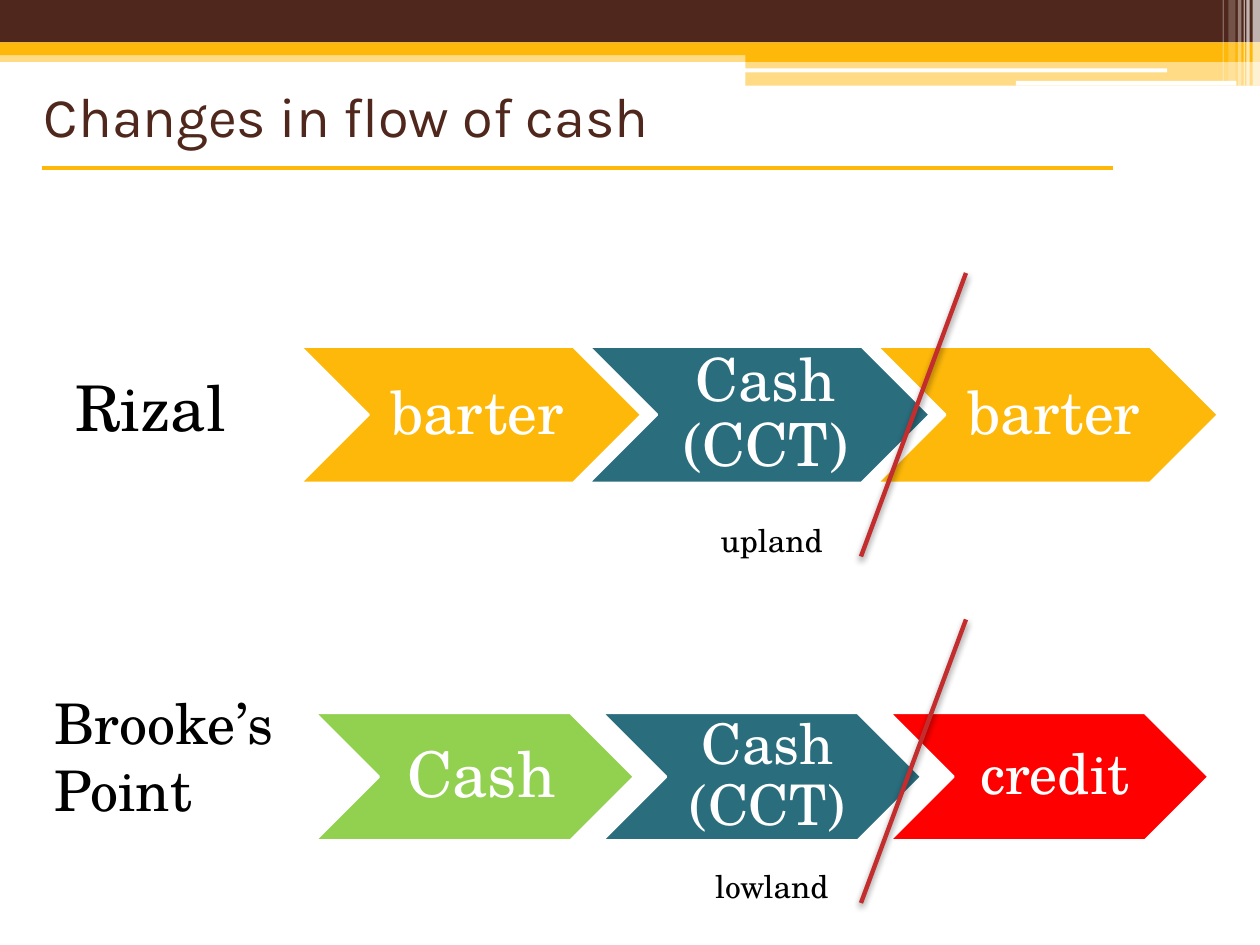
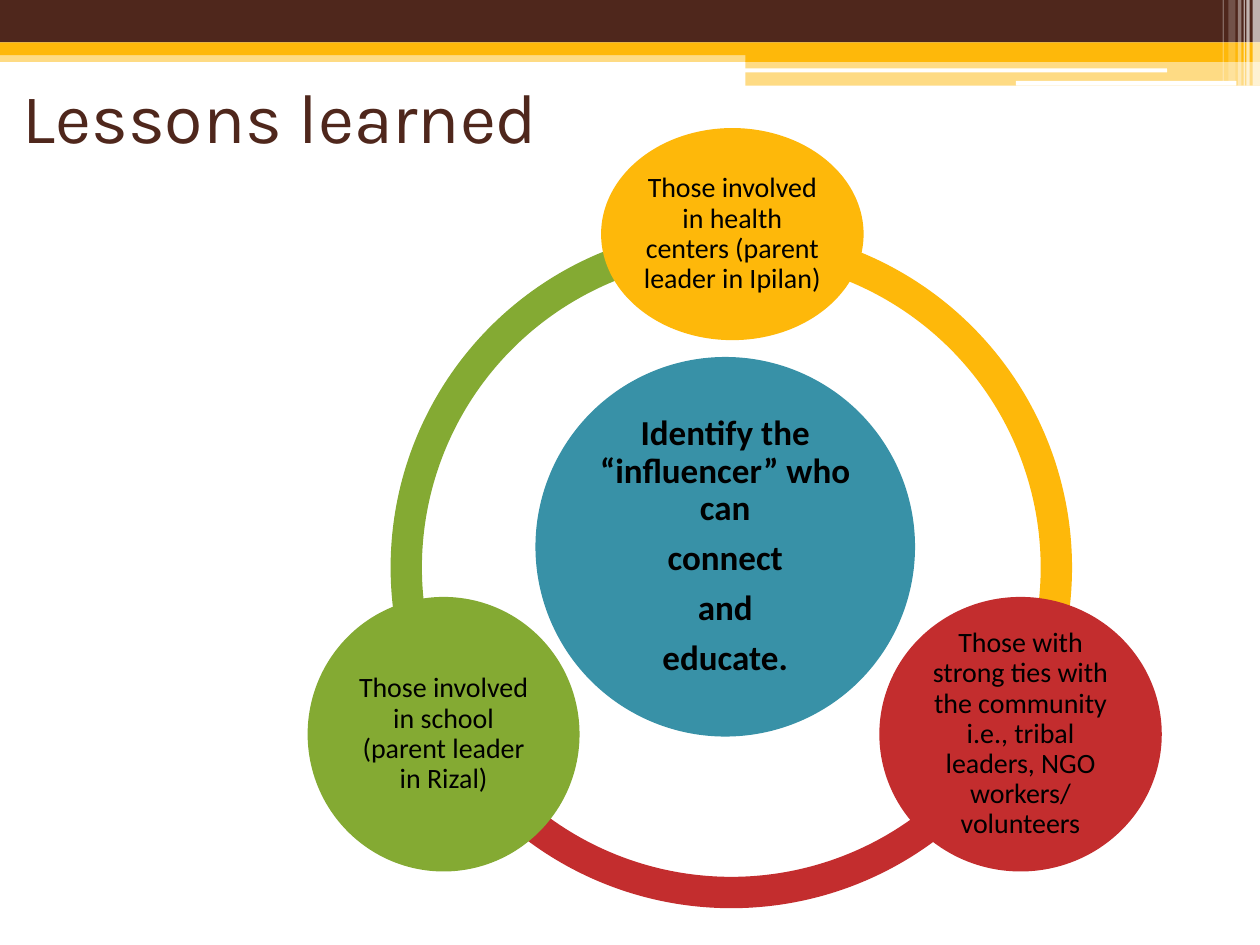
from dataclasses import dataclass

from lxml import etree
from pptx import Presentation
from pptx.dml.color import RGBColor
from pptx.enum.shapes import MSO_CONNECTOR, MSO_SHAPE
from pptx.enum.text import MSO_ANCHOR, PP_ALIGN
from pptx.oxml.ns import qn
from pptx.util import Inches, Pt

RECT, ROUNDED = MSO_SHAPE.RECTANGLE, MSO_SHAPE.ROUNDED_RECTANGLE
CHEVRON, OVAL, ARC = MSO_SHAPE.CHEVRON, MSO_SHAPE.OVAL, MSO_SHAPE.BLOCK_ARC
STRAIGHT = MSO_CONNECTOR.STRAIGHT
LEFT, CENTER = PP_ALIGN.LEFT, PP_ALIGN.CENTER
TOP, MIDDLE = MSO_ANCHOR.TOP, MSO_ANCHOR.MIDDLE

COLUMNS, ROWS = 120, 90


@dataclass(frozen=True)
class Theme:
    brown: str = "4F271C"
    amber: str = "FEB80A"
    white: str = "FFFFFF"
    black: str = "000000"
    teal: str = "2A6D7D"
    blue: str = "3891A7"
    lime: str = "92D050"
    green: str = "84AA33"
    crimson: str = "C32D2E"
    red: str = "FF0000"
    title_font: str = "Karla"
    flow_font: str = "TeX Gyre Schola"
    ring_font: str = "Calibri"
    title_size: int = 32
    big_title_size: int = 40
    large_size: int = 36
    flow_size: int = 34
    medium_size: int = 32
    hub_size: int = 20
    caption_size: int = 18
    node_size: int = 16


def write_text(frame, text, *, font, size, color, bold=False, align=LEFT,
               anchor=TOP, spacing=None, after=0, insets=None):
    """Fill a text frame, one paragraph for each line of the text."""
    frame.word_wrap = True
    frame.vertical_anchor = anchor
    if insets:
        (frame.margin_left, frame.margin_top,
         frame.margin_right, frame.margin_bottom) = map(Inches, insets)
    for index, line in enumerate(text.split("\n")):
        para = frame.add_paragraph() if index else frame.paragraphs[0]
        para.alignment = align
        para.space_after = Pt(after)
        if spacing:
            para.line_spacing = spacing
        span = para.add_run()
        span.text = line
        span.font.name = font
        span.font.size = Pt(size)
        span.font.bold = bold
        span.font.color.rgb = RGBColor.from_string(color)


class DeckBuilder:
    """Holds the theme and the current page; lengths are grid cells."""

    def __init__(self, theme):
        self.theme = theme
        self.deck = Presentation()
        self.deck.slide_width, self.deck.slide_height = Inches(10), Inches(7.5)
        self.page = None

    def place(self, left, top, width, height):
        column = self.deck.slide_width / COLUMNS
        row = self.deck.slide_height / ROWS
        return (round(left * column), round(top * row),
                round(width * column), round(height * row))

    def shape(self, kind, cells, color, opacity=None, outline=None, adjust=()):
        shape = self.page.shapes.add_shape(kind, *self.place(*cells))
        shape.shadow.inherit = False
        shape.fill.solid()
        shape.fill.fore_color.rgb = RGBColor.from_string(color)
        if opacity:
            fill = shape.element.spPr.find(qn("a:solidFill"))
            etree.SubElement(fill[0], qn("a:alpha"), val=str(opacity * 1000))
        if outline:
            shape.line.color.rgb = RGBColor.from_string(outline)
            shape.line.width = Pt(1.5)
        else:
            shape.line.fill.background()
        for index, value in enumerate(adjust):
            shape.adjustments[index] = value
        return shape

    def label(self, cells, text, **style):
        box = self.page.shapes.add_textbox(*self.place(*cells))
        write_text(box.text_frame, text, **style)

    def diagram_text(self, shape, text, size, insets, **style):
        write_text(shape.text_frame, text, size=size, align=CENTER,
                   anchor=MIDDLE, spacing=0.9, after=size * 0.35,
                   insets=insets, **style)

    def chevron(self, cells, color, text, size):
        shape = self.shape(CHEVRON, cells, color, outline=self.theme.white)
        self.diagram_text(shape, text, size, (size / 225, 0.05, 0.05, 0.05),
                          font=self.theme.flow_font, color=self.theme.white)

    def circle(self, cells, color, text, size, bold=False):
        shape = self.shape(OVAL, cells, color)
        self.diagram_text(shape, text, size, (size / 700,) * 4, bold=bold,
                          font=self.theme.ring_font, color=self.theme.black)

    def arc(self, cells, color, start, end):
        # Angles are in degrees; an adjustment of 0.6 is one degree
        self.shape(ARC, cells, color, adjust=(start * 0.6, end * 0.6, 0.046))

    def line(self, start, end, color, width, shadow=False):
        left, top, right, bottom = self.place(*start, *end)
        line = self.page.shapes.add_connector(STRAIGHT, left, top, right, bottom)
        line.line.color.rgb = RGBColor.from_string(color)
        line.line.width = Pt(width)
        effects = etree.SubElement(line.element.spPr, qn("a:effectLst"))
        if shadow:
            outer = etree.SubElement(
                effects, qn("a:outerShdw"), blurRad=str(Pt(4)),
                dist=str(Pt(2)), dir="5400000", rotWithShape="0")
            tint = etree.SubElement(outer, qn("a:srgbClr"), val=self.theme.black)
            etree.SubElement(tint, qn("a:alpha"), val="45000")

    def start_page(self, title, left, size):
        theme = self.theme
        self.page = self.deck.slides.add_slide(self.deck.slide_layouts[6])
        # Header bands
        for cells, color, opacity in (
                ((0, 4.8, 120, 1.1), theme.amber, 50),
                ((0, 0, 120, 4.05), theme.brown, None),
                ((0, 4.05, 120, 1.2), theme.amber, None),
                ((71, 4.7, 49, 1.2), theme.amber, None),
                ((71, 5.8, 49, 2.35), theme.amber, 50)):
            self.shape(RECT, cells, color, opacity)
        # White rules inside the bands
        for cells in ((70.95, 6.5, 40.2, 0.4), (96.75, 7.7, 21, 0.45)):
            self.shape(ROUNDED, cells, theme.white)
        # Translucent stripes at the right edge
        for stripe_left, width, height, opacity in (
                (119.3, 0.7, 8.15, 65), (118.7, 0.33, 8.15, 65),
                (118.45, 0.11, 8.15, 60), (117.9, 0.33, 8.15, 40),
                (117, 0.67, 7.7, 20), (116.45, 0.11, 7.7, 30)):
            self.shape(RECT, (stripe_left, 0, width, height),
                       theme.white, opacity)
        self.label((left, 4, 108, 14), title, font=theme.title_font,
                   size=size, color=theme.brown, anchor=MIDDLE)


def build_cash_flow(builder):
    theme = builder.theme
    builder.start_page("Changes in flow of cash", 3, theme.title_size)

    # One row of chevrons for each place
    flows = (
        ((28.6, 33, 32.5, 13), 27.46, (
            (theme.amber, "barter", theme.flow_size),
            (theme.teal, "Cash (CCT)", theme.flow_size),
            (theme.amber, "barter", theme.flow_size))),
        ((30, 67.9, 30.4, 12.15), 27.36, (
            (theme.lime, "Cash", theme.large_size),
            (theme.teal, "Cash (CCT)", theme.medium_size),
            (theme.red, "credit", theme.medium_size))))
    for (left, top, width, height), step, stages in flows:
        for index, stage in enumerate(stages):
            builder.chevron((left + index * step, top, width, height), *stage)

    # Place names
    black_text = {"font": theme.flow_font, "color": theme.black}
    builder.label((6, 34.5, 106, 8.5), "Rizal",
                  size=theme.large_size, **black_text)
    builder.label((4, 65, 37, 14.15), "Brooke’s\nPoint",
                  size=theme.medium_size, **black_text)

    # Title rule, strokes and captions
    builder.line((4, 16), (106, 16), theme.amber, 2.25)
    for top, caption_top, caption in ((26, 49, "upland"), (59, 82, "lowland")):
        builder.line((92, top), (82, top + 27), theme.crimson, 2.5, shadow=True)
        builder.label((66, caption_top, 15, 4.8), caption, align=CENTER,
                      size=theme.caption_size, **black_text)


def build_lessons(builder):
    theme = builder.theme
    builder.start_page("Lessons learned", 1, theme.big_title_size)

    # Ring of three arcs
    for color, start, end in ((theme.green, 150, 270),
                              (theme.crimson, 30, 150),
                              (theme.amber, 270, 30)):
        builder.arc((37.2, 21.6, 64.9, 64.9), color, start, end)

    # Hub and the three groups around it
    builder.circle((51, 34, 36.15, 36.15), theme.blue,
                   "Identify the “influencer” who can\nconnect\nand\neducate.",
                   theme.hub_size, bold=True)
    for cells, color, text in (
            ((57.25, 12.2, 25, 20.2), theme.amber,
             "Those involved in health centers (parent leader in Ipilan)"),
            ((83.75, 56.85, 26.9, 26.15), theme.crimson,
             "Those with strong ties with the community i.e., tribal leaders, "
             "NGO workers/ volunteers"),
            ((29.3, 56.85, 25.9, 26.15), theme.green,
             "Those involved in school (parent leader in Rizal)")):
        builder.circle(cells, color, text, theme.node_size)


def main():
    builder = DeckBuilder(Theme())
    build_cash_flow(builder)
    build_lessons(builder)
    builder.deck.save("out.pptx")


if __name__ == "__main__":
    main()
